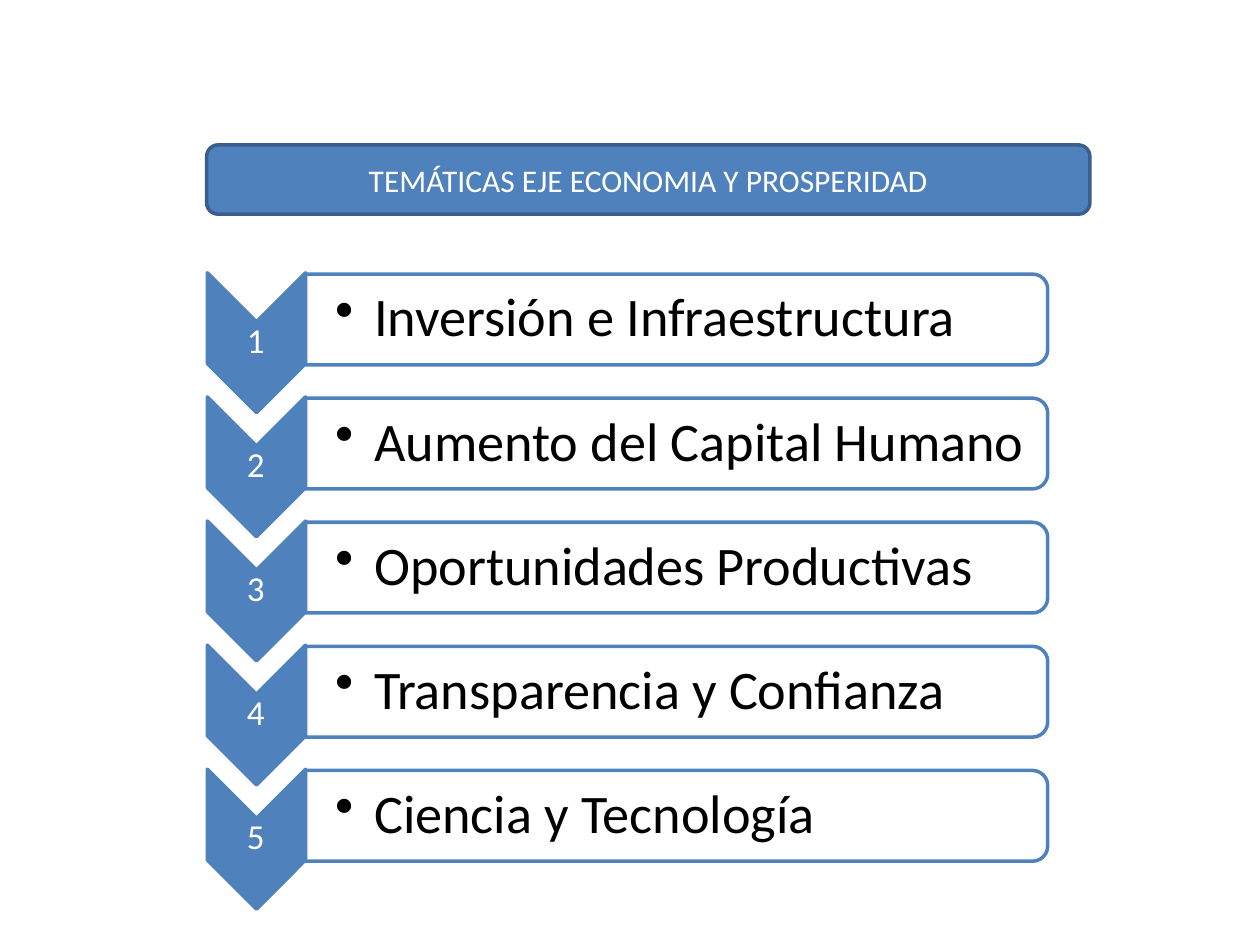
from lxml.etree import SubElement
from pptx import Presentation
from pptx.dml.color import RGBColor
from pptx.enum.shapes import MSO_SHAPE as Kind
from pptx.enum.text import MSO_ANCHOR as Anchor, PP_ALIGN as Align
from pptx.oxml.ns import qn
from pptx.util import Inches, Pt


def hue(code):
    return RGBColor.from_string(code)


def draw(kind, box, fill, line, turn=0):
    shape = slide.shapes.add_shape(kind, *map(Inches, box))
    shape.rotation = turn
    shape.shadow.inherit = False
    shape.fill.solid()
    shape.fill.fore_color.rgb = hue(fill)
    shape.line.color.rgb = hue(line)
    shape.line.width = Pt(2)
    return shape


def write(shape, text, size, color, pad, align):
    frame = shape.text_frame
    frame.word_wrap = True
    frame.vertical_anchor = Anchor.MIDDLE
    (frame.margin_left, frame.margin_top,
     frame.margin_right, frame.margin_bottom) = map(Inches, pad)
    para = frame.paragraphs[0]
    para.text = text
    para.alignment = align
    if align == Align.LEFT:
        para.level = 1
        props = para._p.get_or_add_pPr()
        props.set("marL", str(Inches(0.31)))
        props.set("indent", str(Inches(-0.31)))
        SubElement(props, qn("a:buChar"), char="•")
    para.font.size = Pt(size)
    para.font.name = "Calibri"
    para.font.color.rgb = hue(color)
    return para


BLUE, WHITE = "4F81BD", "FFFFFF"
STEP = 0.985
topics = [
    "Inversión e Infraestructura",
    "Aumento del Capital Humano",
    "Oportunidades Productivas",
    "Transparencia y Confianza",
    "Ciencia y Tecnología",
]

deck = Presentation()
deck.slide_width, deck.slide_height = Inches(10), Inches(7.5)
slide = deck.slides.add_slide(deck.slide_layouts[6])

for row, topic in enumerate(topics):
    drop = row * STEP
    draw(Kind.CHEVRON, (1.48, 2.33 + drop, 1.11, 0.78), BLUE, BLUE, 90)
    label = slide.shapes.add_textbox(
        *map(Inches, (1.64, 2.55 + drop, 0.78, 0.33)))
    para = write(label, str(row + 1), 20, WHITE, [0.01] * 4, Align.CENTER)
    para.line_spacing = 0.9

    bar = draw(Kind.ROUND_2_SAME_RECTANGLE,
               (5.01, -0.41 + drop, 0.72, 5.89), WHITE, BLUE, 90)
    tint = bar.fill._xPr.find(qn("a:solidFill"))[0]
    SubElement(tint, qn("a:alpha"), val="90000")
    label = slide.shapes.add_textbox(
        *map(Inches, (2.42, 2.21 + drop, 5.85, 0.65)))
    para = write(label, topic, 31, "000000",
                 (0.24, 0.02, 0.02, 0.02), Align.LEFT)
    para.line_spacing = 0.9

head = draw(Kind.ROUNDED_RECTANGLE, (1.64, 1.15, 7.01, 0.55), BLUE, "3A5F8C")
write(head, "TEMÁTICAS EJE ECONOMIA Y PROSPERIDAD", 18, WHITE,
      (0.1, 0.05, 0.1, 0.05), Align.CENTER)

deck.save("out.pptx")
